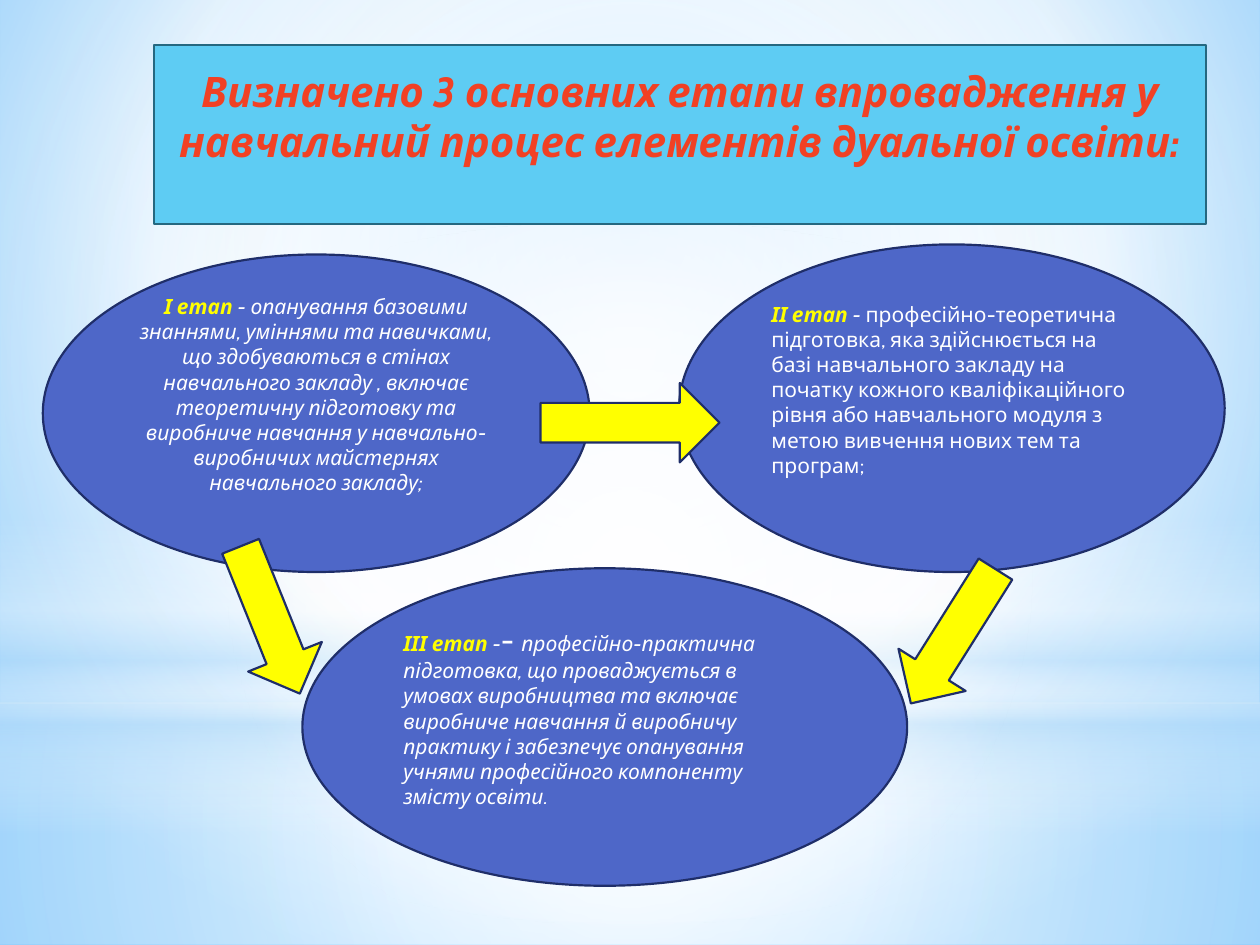
import pptx
import pptx.util
import pptx.dml.color
import pptx.enum.shapes
import pptx.enum.text
import pptx.oxml
import pptx.oxml.ns
from lxml import etree

Inches = pptx.util.Inches
SHAPES = pptx.enum.shapes.MSO_SHAPE
ALIGN = pptx.enum.text.PP_ALIGN
COLORS = {
    "banner": "5ECCF3", "banner_edge": "256880", "heading": "F14124",
    "stage": "4E67C8", "edge": "1F2E69", "accent": "FFFF00",
    "white": "FFFFFF", "mist": "B4DCFA", "sky": "9ED5FF", "deep_sky": "5BB9FF",
}
LABEL = {"size": 12, "bold": True, "italic": True, "color": "accent"}
BODY = {"size": 12, "bold": False, "italic": True, "color": "white"}
UPRIGHT = {**BODY, "italic": False}
CENTER = (50, 50, 50, 50)

GLOWS = [
    (SHAPES.RECTANGLE, (0, 5.58, 10, 1.92),
     [(0, "white", 91), (37, "white", 76), (100, "mist", 79)], CENTER),
    (SHAPES.RECTANGLE, (0, 0, 10, 5.58),
     [(0, "white", 89), (48, "white", 62), (100, "mist", 79)], CENTER),
    (SHAPES.RECTANGLE, (0, 4.12, 10, 2.5),
     [(0, "white", 0), (29, "white", 30), (45, "mist", 40),
      (55, "white", 26), (65, "mist", 60), (100, "white", 0)], None),
    (SHAPES.OVAL, (0, 1.75, 10, 5.58), [(0, "white", 100), (56, "white", 0)], CENTER),
]
HEADING = [("Визначено 3 основних етапи впровадження у навчальний процес "
            "елементів дуальної освіти:", {**LABEL, "size": 24, "color": "heading"})]
STAGES = [
    ((0.34, 2.02, 4.34, 2.52), ALIGN.CENTER, 0.35, [
        ("І етап ", LABEL),
        ("- опанування базовими знаннями, уміннями та навичками, що здобуваються "
         "в стінах навчального закладу , включає теоретичну підготовку та виробниче "
         "навчання у навчально-виробничих майстернях навчального закладу;", BODY)]),
    ((5.39, 1.94, 4.33, 2.6), ALIGN.LEFT, 0.35, [
        ("ІІ етап ", LABEL),
        ("- ", BODY),
        ("професійно-теоретична підготовка, яка здійснюється на базі навчального "
         "закладу на початку кожного кваліфікаційного рівня або навчального модуля "
         "з метою вивчення нових тем та програм;", UPRIGHT)]),
    ((2.4, 4.51, 4.8, 2.52), ALIGN.LEFT, 0.25, [
        ("ІІІ етап ", LABEL),
        ("-", BODY),
        ("- ", {**UPRIGHT, "size": 18}),
        ("професійно-практична підготовка, що проваджується в умовах виробництва та "
         "включає виробниче навчання й виробничу практику і забезпечує опанування "
         "учнями професійного компоненту змісту освіти.", BODY)]),
]
ARROWS = [
    (SHAPES.RIGHT_ARROW, (4.29, 3.04, 1.42, 0.63), 0),
    (SHAPES.DOWN_ARROW, (7.25, 4.42, 0.63, 1.26), 32.2),
    (SHAPES.DOWN_ARROW, (1.83, 4.29, 0.63, 1.26), 338.1),
]


def rgb(name):
    """Return the named colour."""
    return pptx.dml.color.RGBColor.from_string(COLORS[name])


def add_node(parent, tag, **attributes):
    """Append a DrawingML element with the given attributes."""
    node = etree.SubElement(parent, pptx.oxml.ns.qn(tag))
    for key, value in attributes.items():
        node.set(key, str(value))
    return node


def paint_gradient(fill, owner, stops, focus):
    """Give a fill a circular gradient, or a vertical one without a focus."""
    fill.gradient()
    gradient = owner.find(".//" + pptx.oxml.ns.qn("a:gradFill"))
    gradient.clear()
    stop_list = add_node(gradient, "a:gsLst")
    for position, color, opacity in stops:
        stop = add_node(stop_list, "a:gs", pos=position * 1000)
        tint = add_node(stop, "a:srgbClr", val=COLORS[color])
        add_node(tint, "a:alpha", val=opacity * 1000)
    if focus:
        circle = add_node(gradient, "a:path", path="circle")
        edges = {side: share * 1000 for side, share in zip("ltrb", focus)}
        add_node(circle, "a:fillToRect", **edges)
    else:
        add_node(gradient, "a:lin", ang=90 * 60000, scaled=0)


def paint_solid(figure, fill, edge):
    """Give a figure a flat fill and a thin outline."""
    figure.fill.solid()
    figure.fill.fore_color.rgb = rgb(fill)
    figure.line.color.rgb = rgb(edge)
    figure.line.width = pptx.util.Pt(1.25)


def add_figure(slide, preset, box):
    """Add a preset shape without a shadow."""
    figure = slide.shapes.add_shape(preset, *map(Inches, box))
    figure.shadow.inherit = False
    return figure


def write_text(figure, runs, align, bottom):
    """Write formatted runs as one paragraph above a bottom margin."""
    frame = figure.text_frame
    layout = {
        "word_wrap": True, "auto_size": pptx.enum.text.MSO_AUTO_SIZE.NONE,
        "vertical_anchor": pptx.enum.text.MSO_ANCHOR.MIDDLE,
        "margin_left": Inches(0.1), "margin_right": Inches(0.1),
        "margin_top": Inches(0.05), "margin_bottom": Inches(bottom),
    }
    for key, value in layout.items():
        setattr(frame, key, value)
    paragraph = frame.paragraphs[0]
    paragraph.alignment = align
    for text, style in runs:
        run = paragraph.add_run()
        run.text = text
        font = {"name": "Cabin", "size": pptx.util.Pt(style["size"]),
                "bold": style["bold"], "italic": style["italic"]}
        for key, value in font.items():
            setattr(run.font, key, value)
        run.font.color.rgb = rgb(style["color"])


def add_backdrop(slide):
    """Paint the sky background and its layers of glow."""
    sky = [(0, "sky", 100), (60, "white", 100), (100, "deep_sky", 100)]
    paint_gradient(slide.background.fill, slide.element, sky, (20, 10, 20, 60))
    for preset, box, stops, focus in GLOWS:
        glow = add_figure(slide, preset, box)
        glow.line.fill.background()
        paint_gradient(glow.fill, glow.element, stops, focus)


def add_banner(slide):
    """Turn the title placeholder into a rounded banner above the backdrop."""
    banner = slide.shapes.title
    place = dict(zip(("left", "top", "width", "height"), (1.22, 0.36, 8.35, 1.42)))
    for key, value in place.items():
        setattr(banner, key, Inches(value))
    outline = add_node(banner.element.spPr, "a:prstGeom", prst="roundRect")
    add_node(outline, "a:avLst")
    paint_solid(banner, "banner", "banner_edge")
    write_text(banner, HEADING, ALIGN.CENTER, 0.35)
    slide.shapes.element.append(banner.element)


def add_stage(slide, box, align, bottom, runs):
    """Add an oval that describes one stage."""
    stage = add_figure(slide, SHAPES.OVAL, box)
    paint_solid(stage, "stage", "edge")
    write_text(stage, runs, align, bottom)


def add_arrow(slide, preset, box, rotation):
    """Add a block arrow between two stages."""
    arrow = add_figure(slide, preset, box)
    arrow.rotation = rotation
    paint_solid(arrow, "accent", "edge")


def main():
    """Build the slide and save it."""
    deck = pptx.Presentation()
    deck.slide_width, deck.slide_height = Inches(10), Inches(7.5)
    slide = deck.slides.add_slide(deck.slide_layouts[5])
    add_backdrop(slide)
    add_banner(slide)
    for stage in STAGES:
        add_stage(slide, *stage)
    for arrow in ARROWS:
        add_arrow(slide, *arrow)
    deck.save("out.pptx")


if __name__ == "__main__":
    main()
